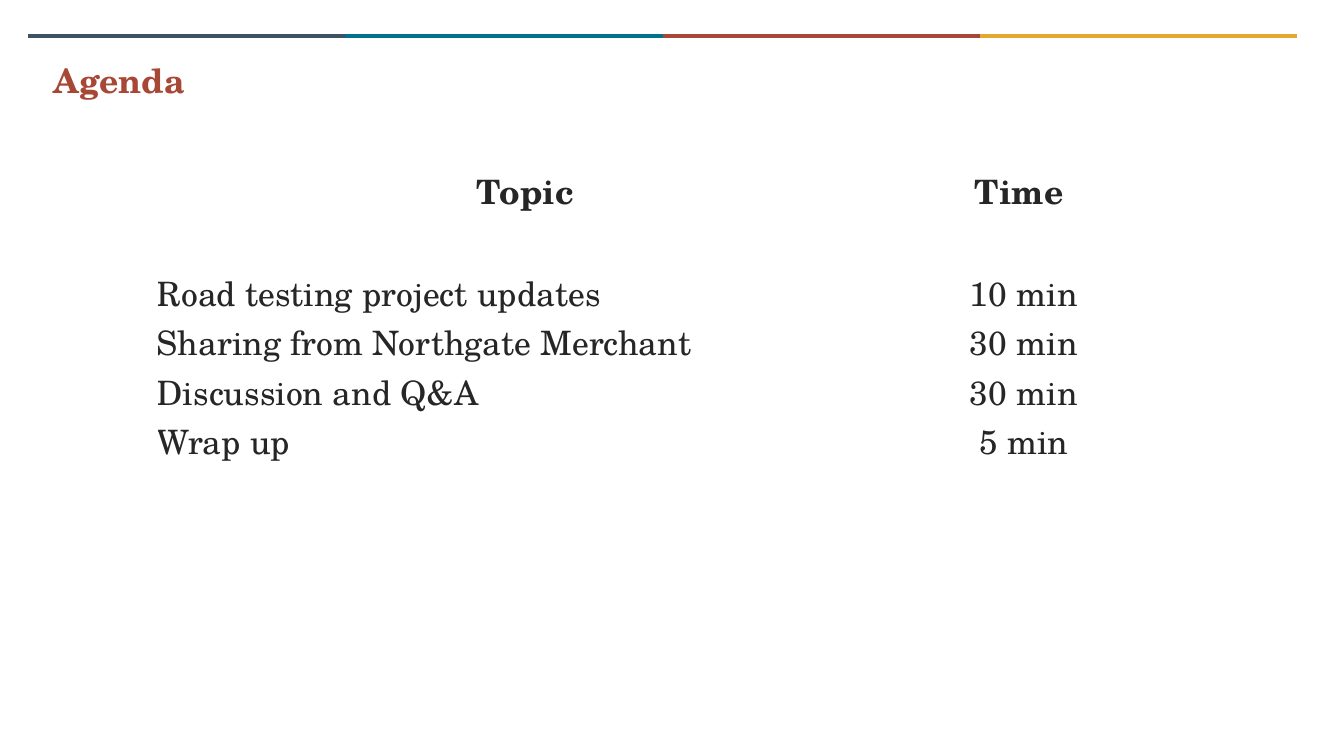
from lxml.etree import SubElement
from pptx import Presentation
from pptx.dml.color import RGBColor
from pptx.enum.shapes import MSO_CONNECTOR
from pptx.enum.text import MSO_ANCHOR, MSO_AUTO_SIZE, PP_ALIGN
from pptx.oxml.ns import qn
from pptx.util import Pt

FONT = "TeX Gyre Schola"
RULE_COLOURS = ["3E5165", "00728F", "A74737", "E5A72D"]
AGENDA = [
    ("Topic", "Time "),
    ("Road testing project updates", "10 min"),
    ("Sharing from Northgate Merchant", "30 min"),
    ("Discussion and Q&A", "30 min"),
    ("Wrap up", "5 min"),
    ("", ""),
    ("", ""),
]
ROW_HEIGHTS = [55.2] + [26.4] * 4 + [6] * 2


def colour(value):
    return RGBColor.from_string(value)


def apply(target, values):
    for name, value in values.items():
        setattr(target, name, value)


def write(para, text, ink, bold):
    span = para.add_run()
    span.text = text
    apply(span.font, {"name": FONT, "size": Pt(18), "bold": bold})
    span.font.color.rgb = colour(ink)


def add_rule(page, left, top, width):
    """Thin rule across the top, in equal coloured parts."""
    group = page.shapes.add_group_shape()
    part = width / len(RULE_COLOURS)
    for index, ink in enumerate(RULE_COLOURS):
        start = left + index * part
        line = group.shapes.add_connector(
            MSO_CONNECTOR.STRAIGHT, Pt(start), Pt(top), Pt(start + part), Pt(top))
        line.line.color.rgb = colour(ink)
        line.line.width = Pt(2.25)
        SubElement(line._element.spPr, qn("a:effectLst"))


def add_title(page, text, left, top, width, height):
    title = page.shapes.title
    apply(title, {"left": Pt(left), "top": Pt(top),
                  "width": Pt(width), "height": Pt(height)})
    frame = title.text_frame
    apply(frame, {"margin_left": Pt(5), "margin_right": Pt(5),
                  "margin_top": Pt(3), "margin_bottom": Pt(3),
                  "word_wrap": True, "auto_size": MSO_AUTO_SIZE.NONE,
                  "vertical_anchor": MSO_ANCHOR.MIDDLE})
    para = frame.paragraphs[0]
    para.alignment = PP_ALIGN.LEFT
    write(para, text, "A74736", True)


def add_agenda(page, left, top, width, height):
    table = page.shapes.add_table(
        len(AGENDA), 2, Pt(left), Pt(top), Pt(width), Pt(height)).table
    apply(table, {"first_row": False, "horz_banding": False})
    time_width = 139
    table.columns[0].width = Pt(width - time_width)
    table.columns[1].width = Pt(time_width)
    for row_index, texts in enumerate(AGENDA):
        table.rows[row_index].height = Pt(ROW_HEIGHTS[row_index])
        header = row_index == 0
        for column, text in enumerate(texts):
            cell = table.cell(row_index, column)
            cell.fill.background()
            apply(cell, {"margin_left": 0, "margin_right": 0, "margin_top": 0,
                         "margin_bottom": 0, "vertical_anchor": MSO_ANCHOR.TOP})
            para = cell.text_frame.paragraphs[0]
            centred = header or column == 1
            para.alignment = PP_ALIGN.CENTER if centred else PP_ALIGN.LEFT
            if text:
                write(para, text, "262626", header)


def main():
    deck = Presentation()
    deck.slide_width, deck.slide_height = Pt(720), Pt(405)
    page = deck.slides.add_slide(deck.slide_layouts[5])
    add_rule(page, 15, 19.4, 680)
    add_title(page, "Agenda", 23.6, 29, 450, 27.4)
    add_agenda(page, 84, 88.6, 534, sum(ROW_HEIGHTS))
    deck.save("out.pptx")


if __name__ == "__main__":
    main()
